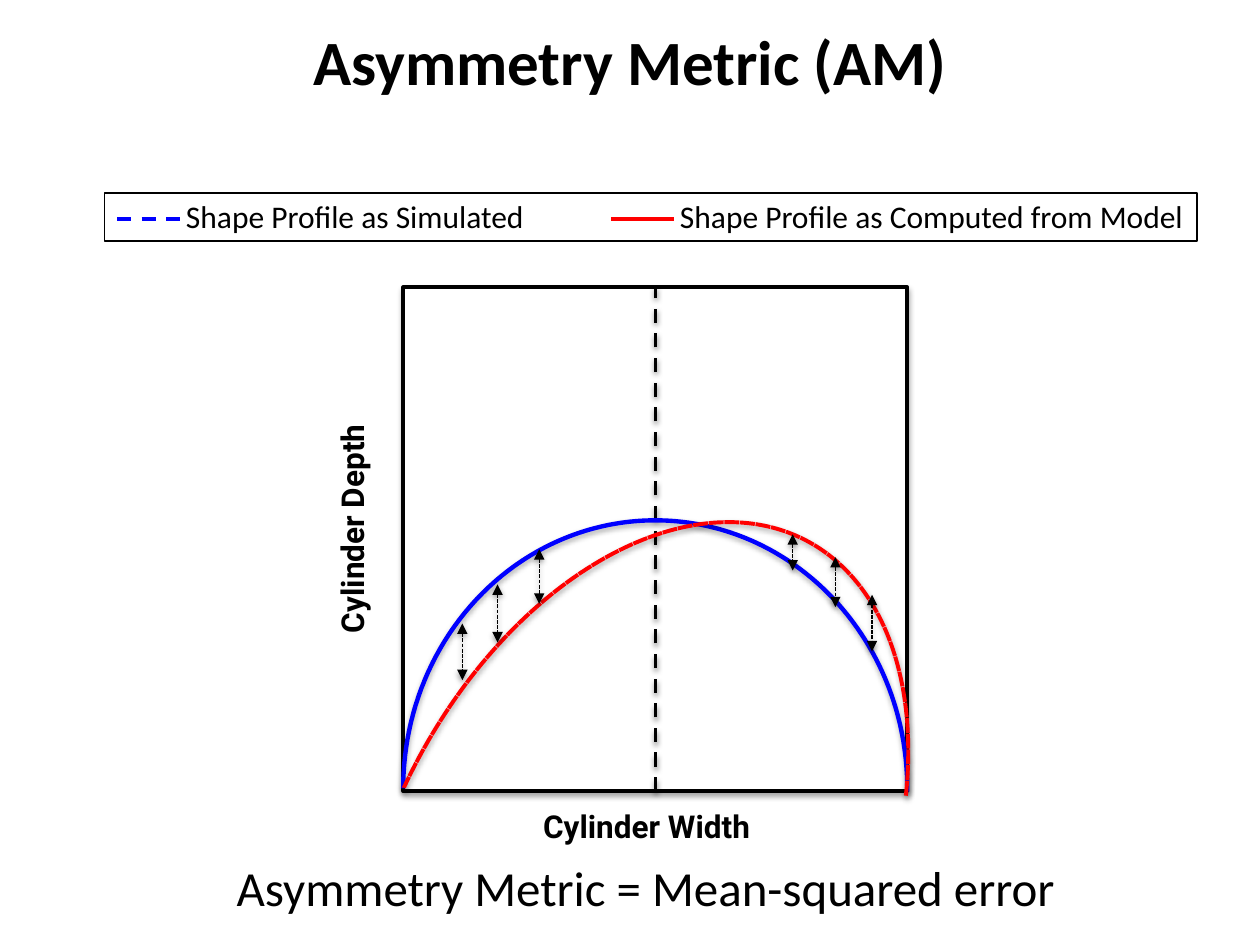
from dataclasses import dataclass

from lxml import etree
from pptx import Presentation
from pptx.dml.color import RGBColor
from pptx.enum.dml import MSO_LINE
from pptx.enum.shapes import MSO_CONNECTOR, MSO_SHAPE
from pptx.enum.text import MSO_ANCHOR, MSO_AUTO_SIZE, PP_ALIGN
from pptx.oxml.ns import qn
from pptx.util import Cm, Pt

STRAIGHT = MSO_CONNECTOR.STRAIGHT
RECTANGLE, BLOCK_ARC = MSO_SHAPE.RECTANGLE, MSO_SHAPE.BLOCK_ARC
DASH, SHORT_DASH = MSO_LINE.DASH, MSO_LINE.SQUARE_DOT
MIDDLE, LEFT, CENTER = MSO_ANCHOR.MIDDLE, PP_ALIGN.LEFT, PP_ALIGN.CENTER
GROW = MSO_AUTO_SIZE.SHAPE_TO_FIT_TEXT
TITLE_ONLY = 5
TOP_SIDE, BOTTOM_SIDE = 0, 2


@dataclass(frozen=True)
class Theme:
    """Colours, fonts and type sizes of the slide."""
    ink: RGBColor = RGBColor(0, 0, 0)
    paper: RGBColor = RGBColor(255, 255, 255)
    simulated: RGBColor = RGBColor(0, 0, 255)
    computed: RGBColor = RGBColor(255, 0, 0)
    body_font: str = "Calibri"
    axis_font: str = "Roboto"
    title_size: int = 36
    caption_size: int = 28
    label_size: int = 18


THEME = Theme()


def set_shadow(item, opacity=0, distance=0):
    """Give an item a soft downward shadow, or none at zero opacity."""
    effects = etree.SubElement(item._element.spPr, qn("a:effectLst"))
    if opacity:
        shadow = etree.SubElement(
            effects, qn("a:outerShdw"), blurRad=str(Pt(3.1)), dist=str(Pt(distance)),
            dir="5400000", rotWithShape="0")
        tint = etree.SubElement(shadow, qn("a:srgbClr"), val=str(THEME.ink))
        etree.SubElement(tint, qn("a:alpha"), val=str(opacity * 1000))


def style_line(item, color, width, dash=None):
    """Set the colour, width and dash of an outline or connector."""
    item.line.color.rgb = color
    item.line.width = Pt(width)
    if dash:
        item.line.dash_style = dash


def add_line(slide, start, end, color, width, dash=None, shadow=True):
    """Draw a straight connector between two points in centimetres."""
    line = slide.shapes.add_connector(STRAIGHT, *map(Cm, start + end))
    style_line(line, color, width, dash)
    set_shadow(line, 38 if shadow else 0, 1.6)
    return line


def add_frame(slide, box, width):
    """Draw a white rectangle with a dark outline."""
    frame = slide.shapes.add_shape(RECTANGLE, *map(Cm, box))
    frame.shadow.inherit = False
    frame.fill.solid()
    frame.fill.fore_color.rgb = THEME.paper
    style_line(frame, THEME.ink, width)
    return frame


def write(frame, text, size, font=THEME.body_font, bold=False, align=LEFT):
    """Write one run of text into the first paragraph of a frame."""
    paragraph = frame.paragraphs[0]
    paragraph.alignment = align
    run = paragraph.add_run()
    run.text = text
    run.font.name, run.font.size, run.font.bold = font, Pt(size), bold
    run.font.color.rgb = THEME.ink


def add_label(slide, box, text, size, anchor=None, **style):
    """Add an unwrapped text box."""
    label = slide.shapes.add_textbox(*map(Cm, box))
    frame = label.text_frame
    frame.word_wrap = False
    frame.auto_size = GROW
    if anchor is not None:
        frame.vertical_anchor = anchor
    write(frame, text, size, **style)
    return label


def add_profile(slide, box, angles, color, width, rotation=0):
    """Draw one shape profile as a thin arc."""
    profile = slide.shapes.add_shape(BLOCK_ARC, *map(Cm, box))
    for index, value in enumerate((*angles, 0)):
        profile.adjustments[index] = value
    profile.rotation = rotation
    profile.fill.background()
    style_line(profile, color, width, SHORT_DASH)
    set_shadow(profile, 35, 1.8)


def add_error_arrow(slide, x, top, bottom):
    """Mark the gap between the profiles with a two-headed arrow."""
    arrow = add_line(slide, (x, top), (x, bottom), THEME.ink, 0.75, SHORT_DASH)
    outline = arrow.line._get_or_add_ln()
    for end in ("a:headEnd", "a:tailEnd"):
        etree.SubElement(outline, qn(end), type="triangle")


def add_title(slide, box):
    """Place and write the slide title."""
    title = slide.shapes.title
    title.left, title.top, title.width, title.height = map(Cm, box)
    title.text_frame.vertical_anchor = MIDDLE
    write(title.text_frame, "Asymmetry Metric (AM)", THEME.title_size, bold=True, align=CENTER)


def add_legend(slide, box):
    """Draw the framed key to both profiles."""
    left, top = box[:2]
    add_frame(slide, box, 0.75)
    entries = [
        (0.25, 7.39, "Shape Profile as Simulated ", THEME.simulated, DASH),
        (10.21, 10.72, "Shape Profile as Computed from Model", THEME.computed, None),
    ]
    for offset, width, text, color, dash in entries:
        x, y = left + offset, top + 0.53
        add_line(slide, (x, y), (x + 1.27, y), color, 2, dash, shadow=False)
        add_label(slide, (x + 1.1, top - 0.05, width, 1.02), text, THEME.label_size,
                  anchor=MIDDLE, align=CENTER)


def add_plot(slide, box):
    """Draw the axes, both profiles and the error arrows."""
    left, top, width, height = box
    frame = add_frame(slide, box, 2)
    frame._element.spPr.remove(frame._element.spPr.find(qn("a:effectLst")))
    set_shadow(frame, 35, 1.8)

    axis = dict(font=THEME.axis_font, bold=True)
    add_label(slide, (left + 2.57, top + height + 0.2, 5.03, 1.02),
              "Cylinder Width", THEME.label_size, **axis)
    depth = add_label(slide, (left - 3.58, top + 4.17, 5.08, 1.02),
                      "Cylinder Depth", THEME.label_size, **axis)
    depth.rotation = 270

    center = left + width / 2
    midline = add_line(slide, (center, top + height), (center, top), THEME.ink, 2, DASH)
    midline.begin_connect(frame, BOTTOM_SIDE)
    midline.end_connect(frame, TOP_SIDE)

    add_profile(slide, (left, top + 4.7, width, 10.8), (107.97, 0.49), THEME.simulated, 2.5)
    add_profile(slide, (left - 0.3, top + 4.24, 9.78, 15.24), (104.15, 189.77),
                THEME.computed, 2.25, rotation=27.6)

    gaps = [(1.19, 6.78, 7.92), (1.9, 5.99, 7.16), (2.74, 5.28, 6.38),
            (7.85, 4.98, 5.71), (8.71, 5.44, 6.45), (9.45, 6.2, 7.34)]
    for x, upper, lower in gaps:
        add_error_arrow(slide, left + x, top + upper, top + lower)


def add_caption(slide, box):
    """State how the metric is defined."""
    add_label(slide, box, "Asymmetry Metric = Mean-squared error", THEME.caption_size)


def main():
    """Build and save the slide."""
    deck = Presentation()
    deck.slide_width, deck.slide_height = Cm(25.4), Cm(19.05)
    slide = deck.slides.add_slide(deck.slide_layouts[TITLE_ONLY])
    add_title(slide, (1.27, 0.03, 22.86, 2.39))
    add_plot(slide, (8.13, 5.79, 10.16, 10.16))
    add_caption(slide, (4.52, 17.17, 17.42, 1.45))
    add_legend(slide, (2.11, 3.89, 22.02, 0.97))
    deck.save("out.pptx")


if __name__ == "__main__":
    main()
